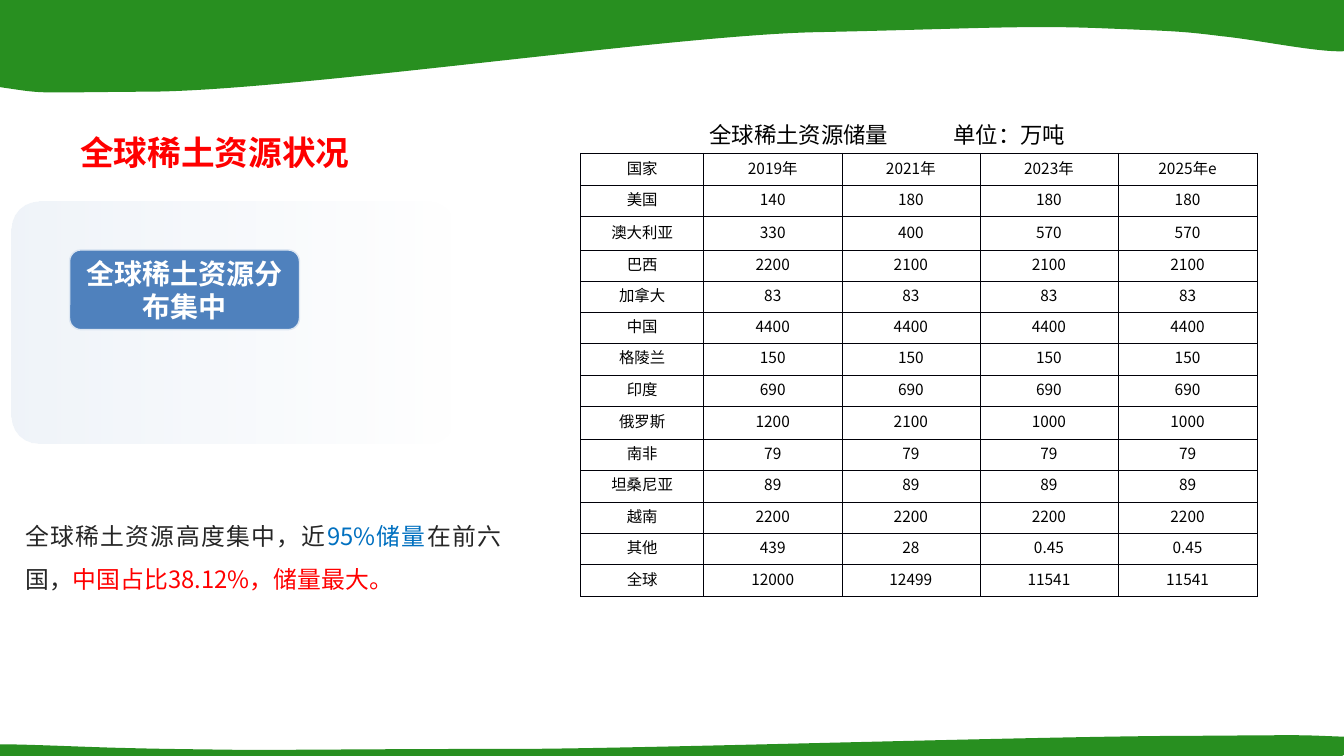
"""Build the slide on global rare earth reserves."""
import pptx
import pptx.util
import pptx.dml.color
import pptx.enum.shapes
import pptx.enum.text
import pptx.oxml.ns
from lxml import etree

Inches, Pt = pptx.util.Inches, pptx.util.Pt
RGBColor = pptx.dml.color.RGBColor
MSO_SHAPE = pptx.enum.shapes.MSO_SHAPE
MSO_ANCHOR = pptx.enum.text.MSO_ANCHOR
PP_ALIGN = pptx.enum.text.PP_ALIGN
qn = pptx.oxml.ns.qn

FONT = "Noto Sans CJK SC"
GREEN = RGBColor(0x28, 0x8F, 0x20)
PALE = RGBColor(0xDC, 0xE6, 0xF2)
BLUE = RGBColor(0x4F, 0x81, 0xBD)
ACCENT = RGBColor(0x00, 0x70, 0xC0)
RED = RGBColor(0xFF, 0x00, 0x00)
DARK = RGBColor(0x26, 0x26, 0x26)
BLACK = RGBColor(0x00, 0x00, 0x00)
WHITE = RGBColor(0xFF, 0xFF, 0xFF)
BORDER = RGBColor(0x00, 0x00, 0x08)

TITLE = "全球稀土资源状况"
BADGE = "全球稀土资源分布集中"
CAPTION = "全球稀土资源储量\t单位：万吨"
SUMMARY = [
    ("全球稀土资源高度集中，近", DARK),
    ("95%储量", ACCENT),
    ("在前六国，", DARK),
    ("中国占比38.12%，储量最大。", RED),
]
RESERVES = [
    ("国家", "2019年", "2021年", "2023年", "2025年e"),
    ("美国", "140", "180", "180", "180"),
    ("澳大利亚", "330", "400", "570", "570"),
    ("巴西", "2200", "2100", "2100", "2100"),
    ("加拿大", "83", "83", "83", "83"),
    ("中国", "4400", "4400", "4400", "4400"),
    ("格陵兰", "150", "150", "150", "150"),
    ("印度", "690", "690", "690", "690"),
    ("俄罗斯", "1200", "2100", "1000", "1000"),
    ("南非", "79", "79", "79", "79"),
    ("坦桑尼亚", "89", "89", "89", "89"),
    ("越南", "2200", "2200", "2200", "2200"),
    ("其他", "439", "28", "0.45", "0.45"),
    ("全球", "12000", "12499", "11541", "11541"),
]
COL_WIDTHS = [1.22, 1.37, 1.37, 1.37, 1.38]
ROW_HEIGHT = 0.31
ROW_EXCEPTIONS = {0: 0.32, 2: 0.33, 8: 0.33, 13: 0.32}

WAVES = [
    {"start": (13.44, 0.48),
     "curves": [((13.33, 0.58), (12.53, 0.4), (12.12, 0.36)),
                ((11.72, 0.31), (11.67, 0.31), (10.9, 0.28)),
                ((10.13, 0.25), (9.53, 0.29), (8.09, 0.32)),
                ((6.65, 0.35), (2.84, 0.91), (1.45, 0.91)),
                ((0.05, 0.92), (0.6, 0.94), (-0.33, 0.82))],
     "corners": [(0, -0.02), (13.33, -0.02)]},
    {"start": (-0.13, 7.39),
     "curves": [((-0.02, 7.37), (0.78, 7.41), (1.19, 7.42)),
                ((1.59, 7.43), (1.64, 7.43), (2.41, 7.44)),
                ((3.18, 7.44), (3.78, 7.43), (5.22, 7.43)),
                ((6.66, 7.42), (10.47, 7.3), (11.86, 7.3)),
                ((13.26, 7.29), (12.71, 7.29), (13.64, 7.32))],
     "corners": [(13.31, 7.5), (-0.02, 7.5)]},
]


def box(left, top, width, height):
    return [Inches(v) for v in (left, top, width, height)]


def add_run(p, text, size, color, bold=False):
    r = p.add_run()
    r.text = text
    r.font.size = Pt(size)
    r.font.bold = bold
    r.font.name = FONT
    r.font.color.rgb = color
    etree.SubElement(r.font._element, qn("a:ea")).set("typeface", FONT)


def set_frame(tf, inset=None, wrap=True, anchor=MSO_ANCHOR.MIDDLE):
    tf.word_wrap = wrap
    tf.vertical_anchor = anchor
    if inset is not None:
        tf.margin_left = tf.margin_right = Inches(inset)
        tf.margin_top = tf.margin_bottom = 0
    return tf.paragraphs[0]


def add_wave(s, start, curves, corners):
    anchors = [curve[-1] for curve in curves] + corners
    fb = s.shapes.build_freeform(Inches(start[0]), Inches(start[1]))
    fb.add_line_segments([(Inches(x), Inches(y)) for x, y in anchors])
    sp = fb.convert_to_shape()
    segments = list(sp._element.iter(qn("a:lnTo")))
    for segment, curve in zip(segments, curves):
        bezier = etree.Element(qn("a:cubicBezTo"))
        for x, y in curve:
            etree.SubElement(bezier, qn("a:pt"), x=str(Inches(x) - sp.left),
                             y=str(Inches(y) - sp.top))
        segment.getparent().replace(segment, bezier)
    sp.shadow.inherit = False
    sp.fill.solid()
    sp.fill.fore_color.rgb = GREEN
    sp.line.fill.background()


def add_round_rect(s, place, radius):
    sp = s.shapes.add_shape(MSO_SHAPE.ROUNDED_RECTANGLE, *box(*place))
    sp.adjustments[0] = radius
    sp.shadow.inherit = False
    return sp


def add_panel(s):
    sp = add_round_rect(s, (0.11, 2, 4.41, 2.4), 0.115)
    sp.line.fill.background()
    sp.fill.gradient()
    sp.fill.gradient_angle = 180
    for position, stop in enumerate(sp.fill.gradient_stops):
        stop.position = position
        stop.color.rgb = PALE
    colors = sp._element.spPr.iter(qn("a:srgbClr"))
    for color, alpha in zip(colors, (0, 44000)):
        etree.SubElement(color, qn("a:alpha")).set("val", str(alpha))


def add_badge(s):
    sp = add_round_rect(s, (0.69, 2.48, 2.28, 0.79), 0.141)
    sp.fill.solid()
    sp.fill.fore_color.rgb = BLUE
    sp.line.color.rgb = PALE
    sp.line.width = Pt(1)
    p = set_frame(sp.text_frame, 0)
    p.alignment = PP_ALIGN.CENTER
    add_run(p, BADGE, 20, WHITE, True)


def style_cell(cell, text):
    pr = cell._tc.get_or_add_tcPr()
    for side in ("a:lnL", "a:lnR", "a:lnT", "a:lnB"):
        ln = etree.SubElement(pr, qn(side), w=str(Pt(0.5)))
        fill = etree.SubElement(ln, qn("a:solidFill"))
        etree.SubElement(fill, qn("a:srgbClr"), val=str(BORDER))
    cell.fill.background()
    cell.vertical_anchor = MSO_ANCHOR.MIDDLE
    cell.margin_left = cell.margin_right = Inches(0.07)
    cell.margin_top = cell.margin_bottom = 0
    p = cell.text_frame.paragraphs[0]
    p.alignment = PP_ALIGN.CENTER
    p.line_spacing = Pt(13)
    add_run(p, text, 11, BLACK)


def add_reserves(s):
    table = s.shapes.add_table(len(RESERVES), len(COL_WIDTHS),
                               *box(5.76, 1.52, 6.71, 4.4)).table
    table.first_row = table.horz_banding = False
    for col, width in zip(table.columns, COL_WIDTHS):
        col.width = Inches(width)
    for i, values in enumerate(RESERVES):
        table.rows[i].height = Inches(ROW_EXCEPTIONS.get(i, ROW_HEIGHT))
        for j, text in enumerate(values):
            style_cell(table.cell(i, j), text)


def main():
    prs = pptx.Presentation()
    prs.slide_width, prs.slide_height = Inches(13.33), Inches(7.5)
    s = prs.slides.add_slide(prs.slide_layouts[5])
    for wave in WAVES:
        add_wave(s, **wave)
    add_panel(s)
    add_badge(s)

    p = set_frame(s.shapes.add_textbox(*box(0.25, 4.68, 4.72, 1.56)).text_frame, 0)
    p.alignment = PP_ALIGN.JUSTIFY
    p.line_spacing = 1.5
    for text, color in SUMMARY:
        add_run(p, text, 17, color)

    title = s.shapes.title
    title.left, title.top, title.width, title.height = box(0.67, 1.06, 2.92, 0.9)
    p = set_frame(title.text_frame, 0)
    p.alignment = PP_ALIGN.CENTER
    add_run(p, TITLE, 24, RED, True)

    add_reserves(s)
    p = set_frame(s.shapes.add_textbox(*box(6.94, 1.15, 4.55, 0.37)).text_frame,
                  anchor=MSO_ANCHOR.TOP)
    tabs = etree.SubElement(p._p.get_or_add_pPr(), qn("a:tabLst"))
    etree.SubElement(tabs, qn("a:tab"), pos=str(Inches(2.42)), algn="l")
    add_run(p, CAPTION, 16, BLACK)
    prs.save("out.pptx")


if __name__ == "__main__":
    main()
